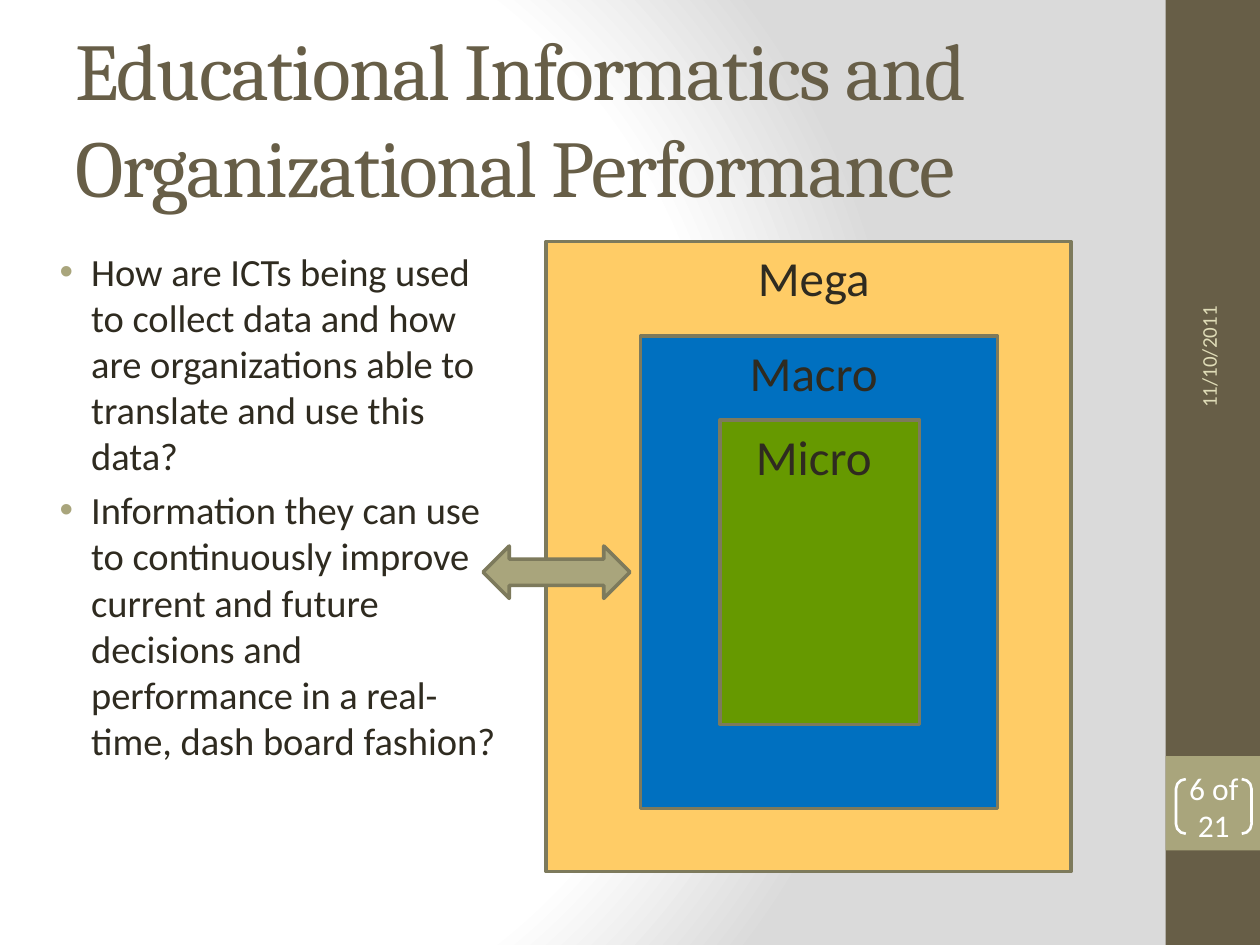
from dataclasses import dataclass

from lxml import etree
from pptx import Presentation
from pptx.dml.color import RGBColor
from pptx.enum.shapes import MSO_SHAPE as Shape
from pptx.enum.text import MSO_ANCHOR as Anchor, MSO_AUTO_SIZE as AutoSize, PP_ALIGN as Align
from pptx.oxml import parse_xml
from pptx.oxml.ns import qn
from pptx.util import Emu, Pt

PX = 7620  # 120 px to the inch

WHITE = RGBColor(0xFF, 0xFF, 0xFF)
BROWN = RGBColor(0x67, 0x5E, 0x47)
KHAKI = RGBColor(0xA9, 0xA5, 0x7C)
OUTLINE = RGBColor(0x7D, 0x7A, 0x5C)
INK = RGBColor(0x2F, 0x2B, 0x20)
CREAM = RGBColor(0xDF, 0xDC, 0xB7)
AMBER = RGBColor(0xFF, 0xCC, 0x66)
BLUE = RGBColor(0x00, 0x70, 0xC0)
GREEN = RGBColor(0x66, 0x99, 0x00)

BACKGROUND = """
<a:gradFill xmlns:a="http://schemas.openxmlformats.org/drawingml/2006/main" rotWithShape="1">
  <a:gsLst>
    <a:gs pos="0"><a:srgbClr val="FFFFFF"/></a:gs>
    <a:gs pos="75000"><a:srgbClr val="FFFFFF"/></a:gs>
    <a:gs pos="100000"><a:srgbClr val="DADADA"/></a:gs>
  </a:gsLst>
  <a:path path="circle"><a:fillToRect l="20000" t="50000" r="100000" b="50000"/></a:path>
</a:gradFill>"""


@dataclass(frozen=True)
class Box:
    left: int
    top: int
    width: int
    height: int

    def emu(self) -> tuple[Emu, ...]:
        return tuple(Emu(n * PX) for n in (self.left, self.top, self.width, self.height))


@dataclass(frozen=True)
class Level:
    name: str
    box: Box
    color: RGBColor


LEVELS = (
    Level("Mega", Box(520, 230, 500, 600), AMBER),
    Level("Macro", Box(610, 320, 340, 450), BLUE),
    Level("Micro", Box(686, 400, 190, 290), GREEN),
)
QUESTIONS = (
    "How are ICTs being used to collect data and how are organizations able to "
    "translate and use this data?",
    "Information they can use to continuously improve current and future decisions "
    "and performance in a real-time, dash board fashion?",
)


def add_run(paragraph, text: str, size: int, color: RGBColor, font: str = "Calibri"):
    run = paragraph.add_run()
    run.text = text
    run.font.size = Pt(size)
    run.font.name = font
    run.font.color.rgb = color
    return run


def add_figure(shapes, kind: Shape, box: Box, fill: RGBColor | None = None,
               line: RGBColor | None = None, weight: float = 2):
    figure = shapes.add_shape(kind, *box.emu())
    figure.shadow.inherit = False
    if fill is None:
        figure.fill.background()
    else:
        figure.fill.solid()
        figure.fill.fore_color.rgb = fill
    if line is None:
        figure.line.fill.background()
    else:
        figure.line.color.rgb = line
        figure.line.width = Pt(weight)
    return figure


def add_text_frame(shapes, box: Box):
    textbox = shapes.add_textbox(*box.emu())
    textbox.text_frame.word_wrap = True
    return textbox, textbox.text_frame


def add_bullet(paragraph) -> None:
    properties = paragraph._p.get_or_add_pPr()
    properties.set("marL", "342900")
    properties.set("indent", "-228600")
    before = etree.SubElement(properties, qn("a:spcBef"))
    etree.SubElement(before, qn("a:spcPct"), val="20000")
    color = etree.SubElement(properties, qn("a:buClr"))
    etree.SubElement(color, qn("a:srgbClr"), val=str(KHAKI))
    etree.SubElement(properties, qn("a:buFont"), typeface="Arial")
    etree.SubElement(properties, qn("a:buChar"), char="•")


def add_level(slide, level: Level) -> None:
    shapes = slide.shapes.add_group_shape().shapes
    add_figure(shapes, Shape.RECTANGLE, level.box, level.color, OUTLINE)
    _, frame = add_text_frame(shapes, Box(550, level.box.top, 450, 68))
    frame.auto_size = AutoSize.SHAPE_TO_FIT_TEXT
    frame.paragraphs[0].alignment = Align.CENTER
    add_run(frame.paragraphs[0], level.name, 28, INK)


def main() -> None:
    deck = Presentation()
    deck.slide_width, deck.slide_height = Emu(1200 * PX), Emu(900 * PX)
    slide = deck.slides.add_slide(deck.slide_layouts[5])

    # Background
    backdrop = slide.background.fill
    backdrop.gradient()
    old_gradient = slide._element.find(".//" + qn("a:gradFill"))
    old_gradient.getparent().replace(old_gradient, parse_xml(BACKGROUND))

    # Side band
    add_figure(slide.shapes, Shape.RECTANGLE, Box(1110, 0, 90, 900), BROWN)
    add_figure(slide.shapes, Shape.RECTANGLE, Box(1110, 720, 90, 90), KHAKI)

    # Title
    title = slide.shapes.title
    title.left, title.top, title.width, title.height = Box(60, 36, 1000, 150).emu()
    title.text_frame.auto_size = AutoSize.NONE
    title.text_frame.vertical_anchor = Anchor.MIDDLE
    heading = title.text_frame.paragraphs[0]
    heading.alignment = Align.LEFT
    heading_run = add_run(heading, "Educational Informatics and Organizational Performance",
                          46, BROWN, "Cambria")
    heading_run.font._element.set("spc", "-100")

    # Questions
    _, questions = add_text_frame(slide.shapes, Box(30, 230, 460, 630))
    for index, question in enumerate(QUESTIONS):
        paragraph = questions.add_paragraph() if index else questions.paragraphs[0]
        add_bullet(paragraph)
        add_run(paragraph, question, 22, INK)

    # Nested levels and the arrow into them
    for level in LEVELS:
        add_level(slide, level)
    add_figure(slide.shapes, Shape.LEFT_RIGHT_ARROW, Box(460, 520, 140, 50), KHAKI, OUTLINE)

    # Date
    date, date_frame = add_text_frame(slide.shapes, Box(991, 216, 320, 48))
    date.rotation = 270
    date_frame.vertical_anchor = Anchor.MIDDLE
    add_run(date_frame.paragraphs[0], "11/10/2011", 12, CREAM)

    # Page number
    page = add_figure(slide.shapes, Shape.DOUBLE_BRACKET, Box(1120, 742, 72, 52),
                      line=WHITE, weight=1.5)
    page.adjustments[0] = 0.18
    frame = page.text_frame
    frame.margin_left = frame.margin_top = frame.margin_right = frame.margin_bottom = 0
    frame.word_wrap = True
    frame.vertical_anchor = Anchor.MIDDLE
    frame.paragraphs[0].alignment = Align.CENTER
    add_run(frame.paragraphs[0], "6 of 21", 18, WHITE)

    deck.save("out.pptx")


if __name__ == "__main__":
    main()
